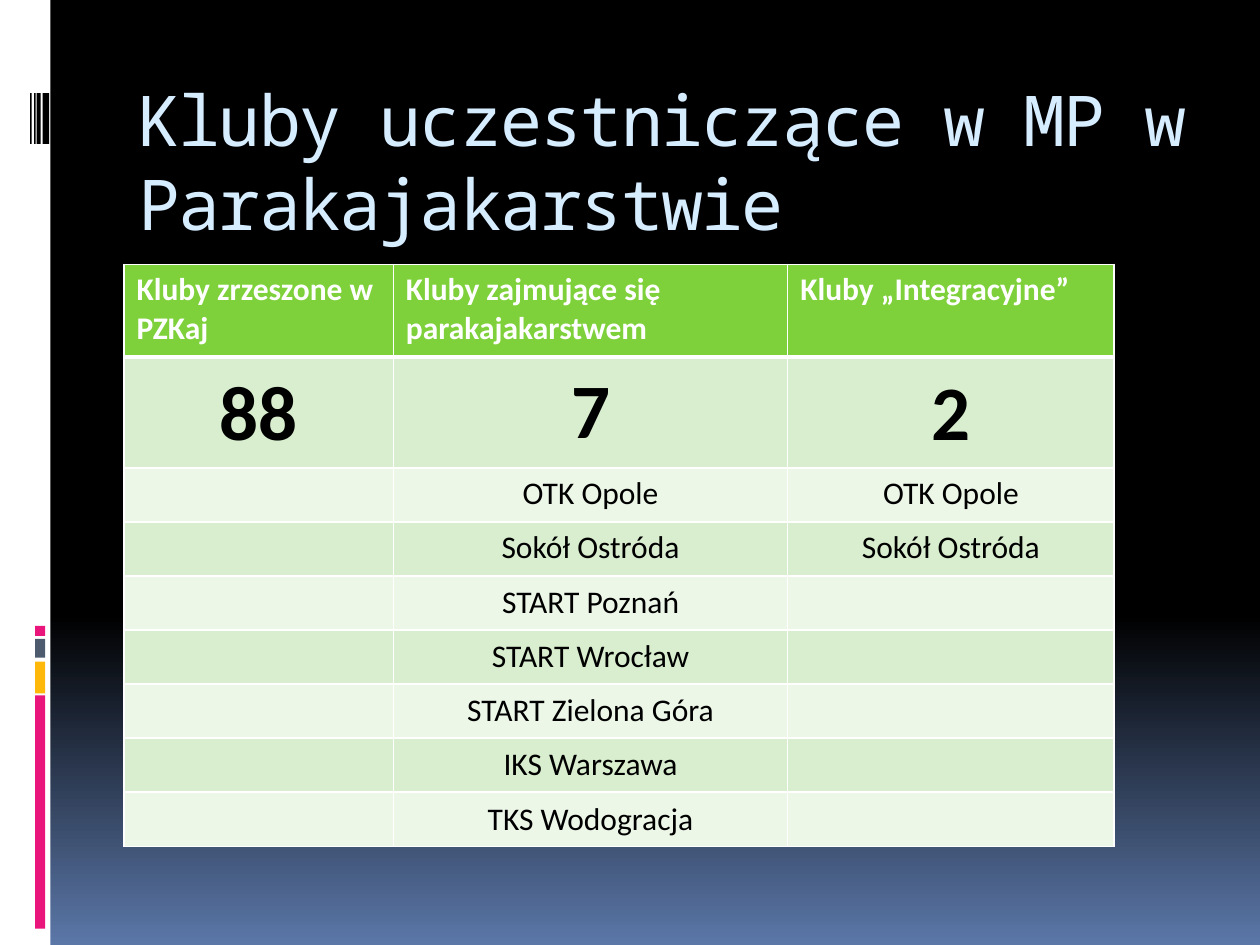
import copy

import pptx
import pptx.dml.color
import pptx.enum.shapes
import pptx.enum.text
import pptx.oxml
import pptx.oxml.ns
import pptx.util

Cm, Pt = pptx.util.Cm, pptx.util.Pt
qn = pptx.oxml.ns.qn
ANCHOR = pptx.enum.text.MSO_ANCHOR
CENTER = pptx.enum.text.PP_ALIGN.CENTER

HEADERS = ["Kluby zrzeszone w PZKaj", "Kluby zajmujące się parakajakarstwem",
           "Kluby „Integracyjne”"]
COUNTS = ["88", "7", "2"]
PARA_CLUBS = ["OTK Opole", "Sokół Ostróda", "START Poznań", "START Wrocław",
              "START Zielona Góra", "IKS Warszawa", "TKS Wodogracja"]
INTEGRATION_CLUBS = PARA_CLUBS[:2]

COLUMN_WIDTHS = [5.43, 7.95, 6.58]
HEADER_HEIGHT, COUNT_HEIGHT, CLUB_HEIGHT = 1.87, 2.23, 1.09
HEADER_FILL, BAND_FILLS = "7FD13B", ["D8EECE", "ECF7E8"]


def color(hex_code):
    return pptx.dml.color.RGBColor.from_string(hex_code)


def write(frame, text, font="Calibri", size=18, fill="000000", bold=False,
          align=None, anchor=ANCHOR.TOP, spacing=None, after=None, tracking=None):
    """Put formatted text into the frame of a box or a table cell."""
    frame.word_wrap = True
    frame.vertical_anchor = anchor
    paragraph = frame.paragraphs[0]
    paragraph.alignment = align
    paragraph.line_spacing = spacing
    paragraph.space_after = after
    paragraph.font.size = Pt(size)
    if not text:
        return
    run = paragraph.add_run()
    run.text = text
    run.font.name, run.font.size, run.font.bold = font, Pt(size), bold
    run.font.color.rgb = color(fill)
    if tracking is not None:
        run.font._element.set("spc", str(tracking))


def paint_background(slide, stops):
    """Vertical gradient through (position, colour) stops, top to bottom."""
    fill = slide.background.fill
    fill.gradient()
    fill.gradient_angle = 270
    stop_list = next(slide._element.iter(qn("a:gsLst")))
    while len(stop_list) < len(stops):
        stop_list.append(copy.deepcopy(stop_list[0]))
    for stop, (position, hex_code) in zip(fill.gradient_stops, stops):
        stop.position = position
        stop.color.rgb = color(hex_code)


def add_bar(slide, left, top, width, height, hex_code):
    bar = slide.shapes.add_shape(pptx.enum.shapes.MSO_SHAPE.RECTANGLE,
                                 Cm(left), Cm(top), Cm(width), Cm(height))
    bar.shadow.inherit = False
    bar.fill.solid()
    bar.fill.fore_color.rgb = color(hex_code)
    bar.line.fill.background()


def add_side_strip(slide):
    add_bar(slide, 0, 0, 1.02, 19.05, "FFFFFF")
    # Coloured blocks
    for top, height, hex_code in [(14.02, 4.7, "EA157A"), (13.34, 0.64, "FEB80A"),
                                  (12.88, 0.38, "4E5B6F"), (12.62, 0.2, "EA157A")]:
        add_bar(slide, 0.71, top, 0.2, height, hex_code)
    # Thin black stripes
    for left, width in [(0.86, 0.13), (0.74, 0.08), (0.69, 0.03), (0.61, 0.03)]:
        add_bar(slide, left, 1.88, width, 1.02, "000000")


def add_title(slide, text):
    box = slide.shapes.add_textbox(Cm(2.54), Cm(1.42), Cm(21.59), Cm(2.54))
    frame = box.text_frame
    frame.margin_top, frame.margin_right = Cm(0.13), 0
    write(frame, text, font="Noto Sans Mono", size=40, fill="D6ECFF",
          spacing=Pt(48), tracking=-100)


def set_borders(cell, **widths):
    """White cell borders; widths in points by side tag, in schema order."""
    properties = cell._tc.get_or_add_tcPr()
    for index, (side, width) in enumerate(widths.items()):
        properties.insert(index, pptx.oxml.parse_xml(
            f'<a:{side} {pptx.oxml.ns.nsdecls("a")} w="{Pt(width)}"><a:solidFill>'
            f'<a:srgbClr val="FFFFFF"/></a:solidFill></a:{side}>'))


def add_club_table(slide):
    club_rows = [["", club, club if club in INTEGRATION_CLUBS else ""]
                 for club in PARA_CLUBS]
    rows = [HEADERS, COUNTS] + club_rows
    heights = [HEADER_HEIGHT, COUNT_HEIGHT] + [CLUB_HEIGHT] * len(club_rows)
    table = slide.shapes.add_table(
        len(rows), len(HEADERS), Cm(2.5), Cm(5.33),
        Cm(sum(COLUMN_WIDTHS)), Cm(sum(heights))).table
    for column, width in zip(table.columns, COLUMN_WIDTHS):
        column.width = Cm(width)

    for r, (texts, height) in enumerate(zip(rows, heights)):
        table.rows[r].height = Cm(height)
        for c, text in enumerate(texts):
            cell = table.cell(r, c)
            cell.fill.solid()
            cell.fill.fore_color.rgb = color(
                HEADER_FILL if r == 0 else BAND_FILLS[(r - 1) % 2])
            set_borders(cell, lnL=1, lnR=1, lnT=3 if r == 1 else 1,
                        lnB=3 if r == 0 else 1)
            if r == 0:
                style = dict(fill="FFFFFF", bold=True)
            elif r == 1:
                style = dict(size=44, bold=True, align=CENTER)
            else:
                style = dict(align=CENTER)
            if text == "7":
                style["after"] = Pt(6)
            write(cell.text_frame, text, **style)
            # Anchors: counts at the bottom, "7" and the later clubs in the middle
            if text == "7" or r > 3:
                cell.vertical_anchor = ANCHOR.MIDDLE
            elif r == 1:
                cell.vertical_anchor = ANCHOR.BOTTOM


def main():
    deck = pptx.Presentation()
    deck.slide_width, deck.slide_height = Cm(25.4), Cm(19.05)
    slide = deck.slides.add_slide(deck.slide_layouts[6])
    paint_background(slide, [(0, "000000"), (0.65, "000000"), (1, "5B77A8")])
    add_side_strip(slide)
    add_title(slide, "Kluby uczestniczące w MP w Parakajakarstwie")
    add_club_table(slide)
    deck.save("out.pptx")


if __name__ == "__main__":
    main()
